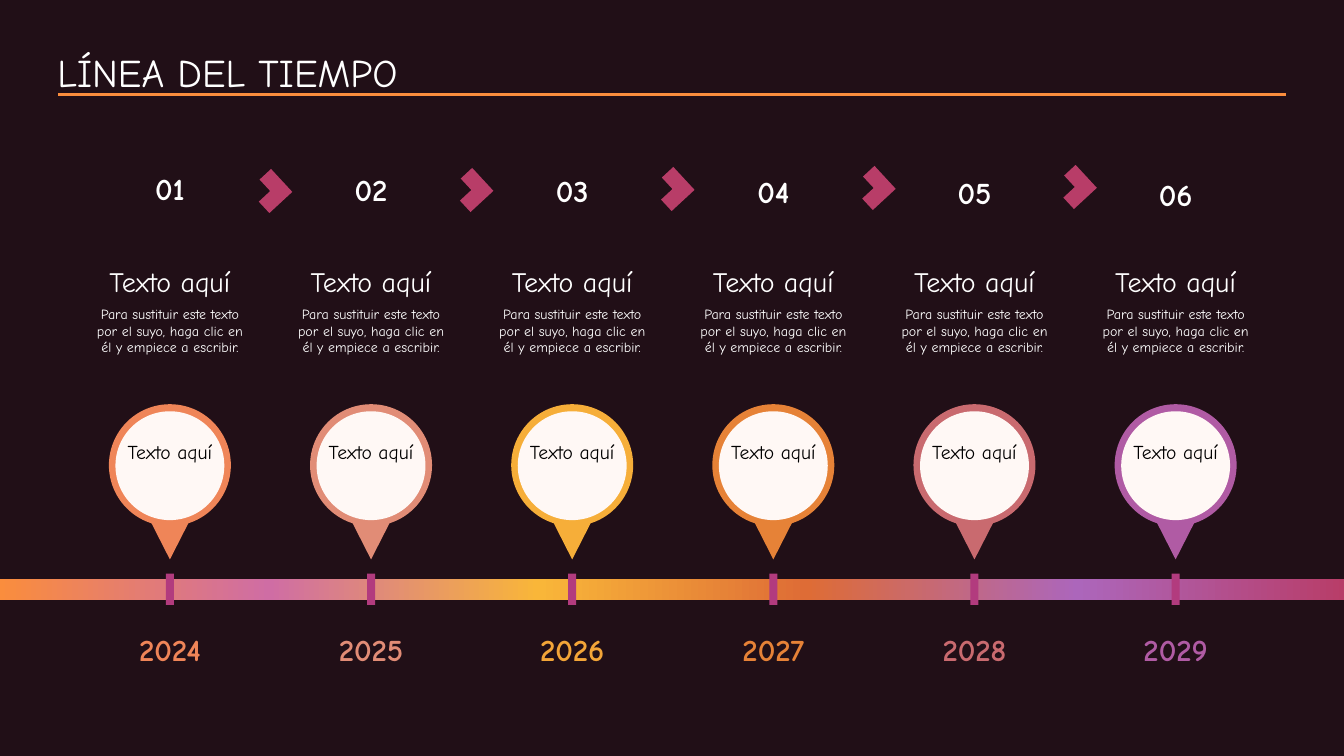
from lxml import etree
from pptx import Presentation
from pptx.dml.color import RGBColor
from pptx.enum import shapes, text
from pptx.oxml import ns
from pptx.util import Inches, Pt

FONT = "Comic Neue"
BACKGROUND = RGBColor(0x21, 0x0F, 0x17)
WHITE = RGBColor(0xFF, 0xFF, 0xFF)
BLACK = RGBColor(0, 0, 0)
CREAM = RGBColor(0xFF, 0xF8, 0xF5)
ORANGE = RGBColor(0xFA, 0x8D, 0x3D)
RASPBERRY = RGBColor(0xB8, 0x3D, 0x68)
MAGENTA = RGBColor(0xB2, 0x3B, 0x7E)
CORAL = RGBColor(0xEF, 0x85, 0x58)
SALMON = RGBColor(0xE1, 0x8C, 0x76)
AMBER = RGBColor(0xF6, 0xAE, 0x39)
DARK_AMBER = RGBColor(0xF3, 0xA5, 0x38)
TANGERINE = RGBColor(0xE6, 0x82, 0x37)
ROSE = RGBColor(0xC9, 0x6A, 0x6F)
PURPLE = RGBColor(0xB0, 0x5B, 0xA4)
BAND_COLOURS = [ORANGE, RGBColor(0xCF, 0x6D, 0xA4), RGBColor(0xF9, 0xB6, 0x39),
                RGBColor(0xDE, 0x6C, 0x36), RGBColor(0xAC, 0x66, 0xBB), RASPBERRY]

# Year, pin colour, year colour
MILESTONES = [
    ("2024", CORAL, CORAL),
    ("2025", SALMON, SALMON),
    ("2026", AMBER, DARK_AMBER),
    ("2027", TANGERINE, TANGERINE),
    ("2028", ROSE, ROSE),
    ("2029", PURPLE, PURPLE),
]
HEADING = "Texto aquí"
DETAIL = "Para sustituir este texto por el suyo, haga clic en él y empiece a escribir."
FIRST_CENTRE, STEP = 1.685, 1.995


def add_text(parent, left, top, width, height, words, size, colour,
             bold=False, align=text.PP_ALIGN.CENTER):
    box = parent.add_textbox(Inches(left), Inches(top), Inches(width), Inches(height))
    box.text_frame.word_wrap = True
    para = box.text_frame.paragraphs[0]
    para.text = words
    para.alignment = align
    para.font.name, para.font.size = FONT, Pt(size)
    para.font.bold, para.font.color.rgb = bold, colour
    return para


def add_filled(parent, kind, left, top, width, height, colour):
    shape = parent.add_shape(kind, Inches(left), Inches(top), Inches(width), Inches(height))
    shape.shadow.inherit = False
    shape.fill.solid()
    shape.fill.fore_color.rgb = colour
    shape.line.fill.background()
    return shape


def add_title(page, left, top, width, height):
    para = add_text(page.shapes, left, top, width, height, "LÍNEA DEL TIEMPO", 28,
                    WHITE, align=text.PP_ALIGN.LEFT)
    para._p.get_or_add_pPr().set("marL", str(Inches(0.47)))
    # Rule under the title
    rule_top = Inches(top + 0.51)
    rule = page.shapes.add_connector(shapes.MSO_CONNECTOR.STRAIGHT,
                                     Inches(left + 0.58), rule_top,
                                     Inches(left + 12.75), rule_top)
    rule.line.color.rgb, rule.line.width = ORANGE, Pt(2)
    etree.SubElement(rule._element.spPr, ns.qn("a:effectLst"))


def add_band(page, left, top, width, height):
    band = add_filled(page.shapes, shapes.MSO_SHAPE.RECTANGLE,
                      left, top, width, height, ORANGE)
    band.fill.gradient()
    band.fill.gradient_angle = 0
    # Evenly spaced colour stops
    stops = band._element.spPr.find(".//" + ns.qn("a:gsLst"))
    for stop in list(stops):
        stops.remove(stop)
    for index, colour in enumerate(BAND_COLOURS):
        stop = etree.SubElement(stops, ns.qn("a:gs"), pos=str(index * 20000))
        etree.SubElement(stop, ns.qn("a:srgbClr"), val=str(colour))


def add_chevron(page, left, top, side):
    chevron = add_filled(page.shapes, shapes.MSO_SHAPE.RECTANGLE,
                         left, top, side, side, RASPBERRY)
    # The L-shaped preset has no member in MSO_SHAPE
    chevron._element.spPr.find(ns.qn("a:prstGeom")).set("prst", "corner")
    chevron.rotation = 227.2


def add_pin(page, centre, top, colour):
    pin = page.shapes.add_group_shape().shapes
    add_filled(pin, shapes.MSO_SHAPE.OVAL, centre - 0.605, top, 1.21, 1.21, colour)
    add_filled(pin, shapes.MSO_SHAPE.FLOWCHART_MERGE,
               centre - 0.295, top + 0.96, 0.59, 0.58, colour)
    add_filled(pin, shapes.MSO_SHAPE.OVAL, centre - 0.54, top + 0.07, 1.08, 1.08, CREAM)
    add_text(pin, centre - 0.545, top + 0.31, 1.09, 0.57, HEADING, 14, BLACK)


def add_milestone(page, index, centre, year, pin_colour, year_colour):
    # The numbers step down and the chevrons step up along the row
    label_left = centre - 0.545
    add_text(page.shapes, label_left, 1.63 + 0.012 * index, 1.09, 0.47,
             f"{index + 1:02}", 22, WHITE, bold=True)
    if index < len(MILESTONES) - 1:
        add_chevron(page, centre + 0.84, 1.74 - 0.01 * index, 0.31)
    # Heading and detail
    add_text(page.shapes, centre - 0.835, 2.57, 1.67, 0.43, HEADING, 20, WHITE)
    add_text(page.shapes, centre - 0.835, 2.98, 1.67, 0.77, DETAIL, 10, WHITE)
    # Pin, tick and year
    add_pin(page, centre, 4.01, pin_colour)
    add_filled(page.shapes, shapes.MSO_SHAPE.RECTANGLE,
               centre - 0.04, 5.69, 0.08, 0.31, MAGENTA)
    add_text(page.shapes, label_left, 6.21, 1.09, 0.47, year, 22, year_colour, bold=True)


def main():
    deck = Presentation()
    deck.slide_width, deck.slide_height = Inches(13.33), Inches(7.5)
    page = deck.slides.add_slide(deck.slide_layouts[6])
    page.background.fill.solid()
    page.background.fill.fore_color.rgb = BACKGROUND
    add_band(page, 0, 5.74, 13.35, 0.21)
    add_title(page, 0, 0.43, 13.37, 0.57)
    for index, milestone in enumerate(MILESTONES):
        add_milestone(page, index, FIRST_CENTRE + STEP * index, *milestone)
    deck.save("out.pptx")


if __name__ == "__main__":
    main()
